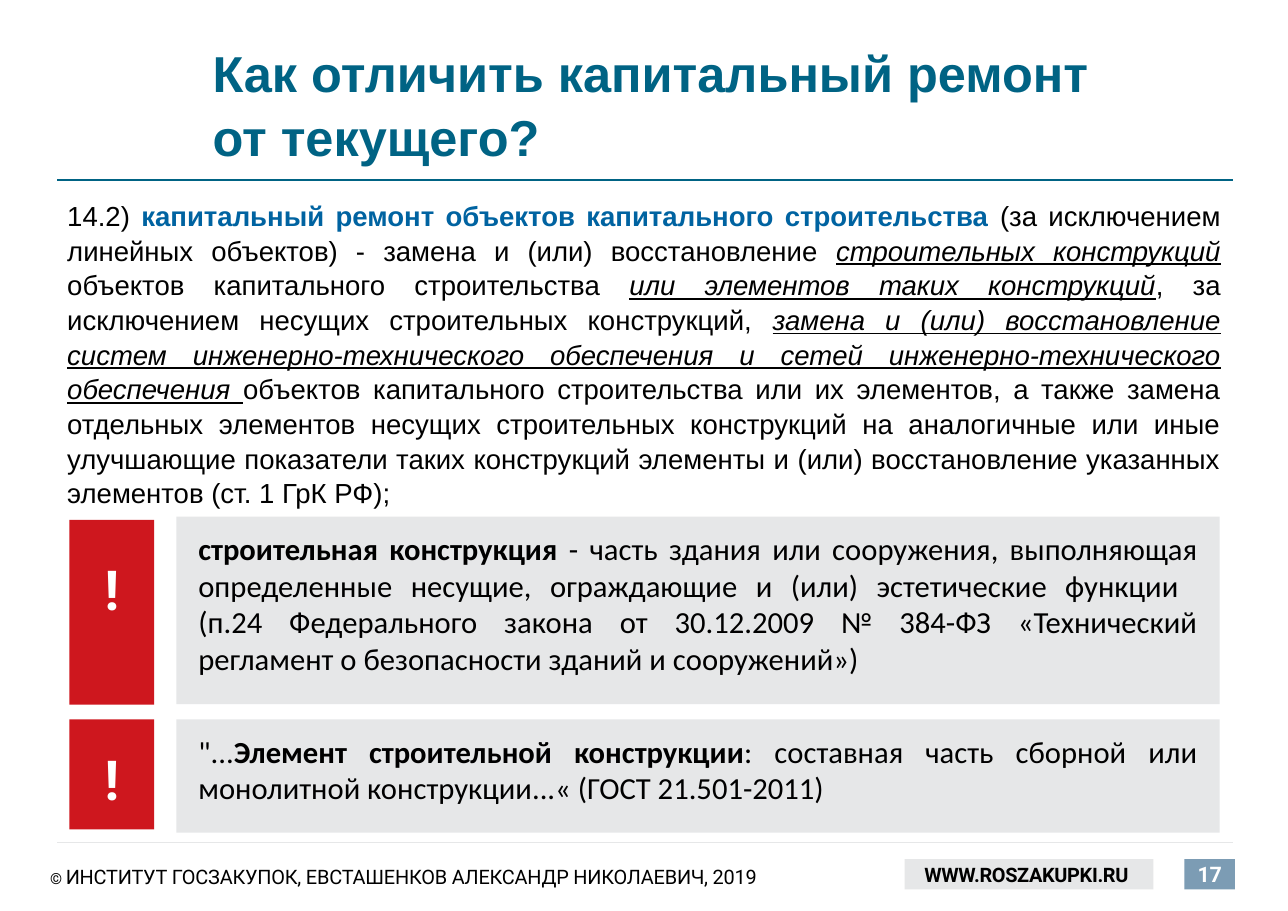
from lxml import etree
from pptx import Presentation
from pptx.dml.color import RGBColor
from pptx.enum.shapes import MSO_CONNECTOR, MSO_SHAPE
from pptx.enum.text import MSO_ANCHOR, MSO_AUTO_SIZE, PP_ALIGN
from pptx.oxml.ns import qn
from pptx.util import Inches, Pt

RECTANGLE, STRAIGHT = MSO_SHAPE.RECTANGLE, MSO_CONNECTOR.STRAIGHT
LEFT, CENTER, JUSTIFY = PP_ALIGN.LEFT, PP_ALIGN.CENTER, PP_ALIGN.JUSTIFY
TOP, MIDDLE = MSO_ANCHOR.TOP, MSO_ANCHOR.MIDDLE
NO_AUTOFIT = MSO_AUTO_SIZE.NONE

WIDTH, HEIGHT = Inches(11.69), Inches(8.27)
TEAL, BLUE, RED = "006384", "0063A1", "CE171E"
GREY, STEEL, BLACK, WHITE = "E6E7E8", "7C9CB4", "000000", "FFFFFF"

BOLD = {"bold": True}
STRESSED = {"italic": True, "underline": True}
HEADING = {"name": "Arial", "size": Pt(33), "bold": True, "color": TEAL}
LAW = {"name": "Arial", "size": Pt(18), "color": BLACK}
DEFINITION = {"name": "Calibri", "size": Pt(20), "color": BLACK}
MARK = {"name": "Roboto", "size": Pt(36), "bold": True, "color": WHITE}
FOOTER = {"name": "Roboto", "size": Pt(13), "color": BLACK, "spacing": -10}
SITE = FOOTER | {"bold": True, "spacing": -20}
PAGE = SITE | {"size": Pt(14), "color": WHITE}

TITLE = [("Как отличить капитальный ремонт\nот текущего?", {})]
LAW_TEXT = [
    ("14.2) ", {}),
    ("капитальный ремонт объектов капитального строительства ", BOLD | {"color": BLUE}),
    ("(за исключением линейных объектов) - замена и (или) восстановление ", {}),
    ("строительных конструкций ", STRESSED),
    ("объектов капитального строительства ", {}),
    ("или элементов таких конструкций", STRESSED),
    (", за исключением несущих строительных конструкций, ", {}),
    ("замена и (или) восстановление систем инженерно-технического обеспечения "
     "и сетей инженерно-технического обеспечения ", STRESSED),
    ("объектов капитального строительства или их элементов, а также замена отдельных "
     "элементов несущих строительных конструкций на аналогичные или иные улучшающие "
     "показатели таких конструкций элементы и (или) восстановление указанных элементов "
     "(ст. 1 ГрК РФ);", {}),
]
CONSTRUCTION = [
    ("строительная конструкция ", BOLD),
    ("- часть здания или сооружения, выполняющая определенные несущие, ограждающие "
     "и (или) эстетические функции \n(п.24 Федерального закона от 30.12.2009 № 384-ФЗ "
     "«Технический регламент о безопасности зданий и сооружений»)", {}),
]
ELEMENT = [
    ("\"...", {}),
    ("Элемент строительной конструкции", BOLD),
    (": составная часть сборной или монолитной конструкции...« (ГОСТ 21.501-2011)", {}),
]
COPYRIGHT = [
    ("© ", {"size": Pt(10)}),
    ("ИНСТИТУТ ГОСЗАКУПОК, ЕВСТАШЕНКОВ АЛЕКСАНДР НИКОЛАЕВИЧ, 2019", {}),
]


def rgb(value):
    return RGBColor.from_string(value)


class SlideBuilder:
    """Places elements by percent of the slide's width and height."""

    def __init__(self, slide):
        self.slide = slide

    def area(self, left, top, width, height):
        return (int(WIDTH * left / 100), int(HEIGHT * top / 100),
                int(WIDTH * width / 100), int(HEIGHT * height / 100))

    def set_text(self, shape, parts, style, align=LEFT, anchor=TOP, insets=(0, 0, 0, 0),
                 leading=None):
        """Fill a shape with one paragraph; insets are left, top, right, bottom in inches."""
        frame = shape.text_frame
        left, top, right, bottom = map(Inches, insets)
        settings = {"word_wrap": True, "auto_size": NO_AUTOFIT, "vertical_anchor": anchor,
                    "margin_left": left, "margin_top": top,
                    "margin_right": right, "margin_bottom": bottom}
        for key, value in settings.items():
            setattr(frame, key, value)
        paragraph = frame.paragraphs[0]
        properties = paragraph._p.get_or_add_pPr()
        properties.set("marL", "0")
        properties.set("indent", "0")
        etree.SubElement(properties, qn("a:buNone"))
        paragraph.alignment = align
        paragraph.space_before = Pt(0)
        if leading:
            paragraph.line_spacing = leading
        for text, changes in parts:
            for number, line in enumerate(text.split("\n")):
                if number:
                    paragraph.add_line_break()
                self.style_run(paragraph.add_run(), line, style | changes)

    def style_run(self, run, text, style):
        run.text = text
        for key, value in style.items():
            if key == "color":
                run.font.color.rgb = rgb(value)
            elif key == "spacing":
                run._r.get_or_add_rPr().set("spc", str(value))
            else:
                setattr(run.font, key, value)

    def placeholder(self, index, area, parts, style, **layout):
        holder = self.slide.placeholders[index]
        for key, value in zip(("left", "top", "width", "height"), self.area(*area)):
            setattr(holder, key, value)
        self.set_text(holder, parts, style, **layout)

    def panel(self, area, fill, parts, style, **layout):
        box = self.slide.shapes.add_shape(RECTANGLE, *self.area(*area))
        box.shadow.inherit = False
        box.fill.solid()
        box.fill.fore_color.rgb = rgb(fill)
        box.line.fill.background()
        self.set_text(box, parts, style, **layout)

    def label(self, area, parts, style, **layout):
        self.set_text(self.slide.shapes.add_textbox(*self.area(*area)), parts, style, **layout)

    def rule(self, top, color, weight):
        left, y, width, _ = self.area(4.45, top, 91.27, 0)
        line = self.slide.shapes.add_connector(STRAIGHT, left, y, left + width, y)
        line.line.color.rgb = rgb(color)
        line.line.width = Pt(weight)
        etree.SubElement(line._element.spPr, qn("a:effectLst"))


def main():
    deck = Presentation()
    deck.slide_width, deck.slide_height = WIDTH, HEIGHT
    page = SlideBuilder(deck.slides.add_slide(deck.slide_layouts[1]))

    page.placeholder(0, (16.5, 4.6, 79.5, 13.4), TITLE, HEADING, anchor=MIDDLE, leading=1.05)
    page.rule(19.8, TEAL, 1.42)
    page.placeholder(1, (4.36, 21.04, 91.27, 34.5), LAW_TEXT, LAW, align=JUSTIFY,
                     insets=(0.1, 0.05, 0.1, 0.05), leading=1.05)

    definitions = [
        (CONSTRUCTION, (56.7, 20.6), (57.07, 20.3), 0.32),
        (ELEMENT, (78.96, 12.45), (78.96, 12.1), 0.24),
    ]
    for parts, definition_rows, mark_rows, mark_inset in definitions:
        page.panel((5.39, mark_rows[0], 6.59, mark_rows[1]), RED, [("!", {})], MARK,
                   align=CENTER, insets=(0, mark_inset, 0, 0))
        page.panel((13.69, definition_rows[0], 81.01, definition_rows[1]), GREY, parts,
                   DEFINITION, align=JUSTIFY, insets=(0.2, 0.12, 0.2, 0.24))

    page.rule(92.5, GREY, 0.85)
    page.label((3.9, 93.7, 58.4, 5), COPYRIGHT, FOOTER, anchor=MIDDLE)
    page.panel((70.23, 94.3, 19.33, 3.35), GREY, [("WWW.ROSZAKUPKI.RU", {})], SITE,
               anchor=MIDDLE, insets=(0.18, 0, 0, 0))
    page.panel((91.96, 94.3, 3.93, 3.35), STEEL, [("17", {})], PAGE,
               align=CENTER, anchor=MIDDLE)
    deck.save("out.pptx")


if __name__ == "__main__":
    main()
